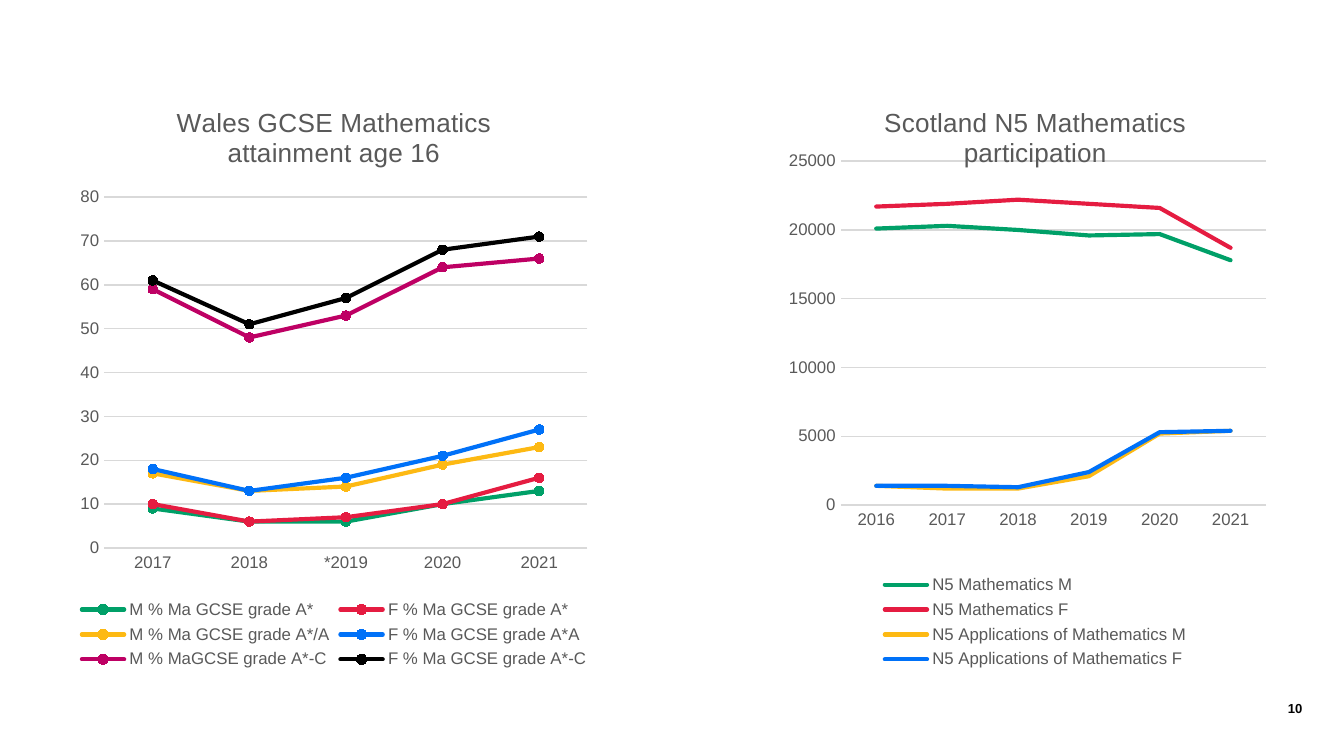
import pptx
import pptx.chart.data
import pptx.dml.color
import pptx.enum.chart
import pptx.enum.text
import pptx.oxml
import pptx.oxml.ns
import pptx.util

Inches, Pt = pptx.util.Inches, pptx.util.Pt
XL = pptx.enum.chart
COLORS = {
    "text": "595959", "grid": "D9D9D9", "black": "000000", "green": "00A068",
    "red": "E51C41", "yellow": "FDB913", "blue": "0071F8", "magenta": "BE0064",
}
SERIES_COLORS = ["green", "red", "yellow", "blue", "magenta", "black"]


def rgb(name):
    return pptx.dml.color.RGBColor.from_string(COLORS[name])


def style_font(font, size, color, bold=False):
    font.name, font.size, font.bold = "Arial", Pt(size), bold
    font.color.rgb = rgb(color)


prs = pptx.Presentation()
prs.slide_width = Inches(10)
prs.slide_height = prs.slide_width * 9 // 16
slide = prs.slides.add_slide(prs.slide_layouts[6])

page_number = slide.shapes.add_textbox(Inches(8.7), Inches(5.21), Inches(0.99), Inches(0.3)).text_frame
page_number.word_wrap = True
page_number.margin_left = page_number.margin_right = 0
page_number.margin_top = page_number.margin_bottom = 0
number_line = page_number.paragraphs[0]
number_line.text = "10"
number_line.alignment = pptx.enum.text.PP_ALIGN.RIGHT
number_line.space_after = Pt(6)
style_font(number_line.runs[0].font, 7, "black", bold=True)

CHART_TOP, CHART_HEIGHT = 0.61, 4.41
wales = {
    "title": "Wales GCSE Mathematics attainment age 16",
    "left": 0.52, "width": 3.93, "markers": True, "plot": None,
    "axis_max": 80, "axis_step": 10,
    "years": ["2017", "2018", "*2019", "2020", "2021"],
    "series": [
        ("M % Ma GCSE grade A*", [9, 6, 6, 10, 13]),
        ("F % Ma GCSE grade A*", [10, 6, 7, 10, 16]),
        ("M % Ma GCSE grade A*/A", [17, 13, 14, 19, 23]),
        ("F % Ma GCSE grade A*A", [18, 13, 16, 21, 27]),
        ("M % MaGCSE grade A*-C", [59, 48, 53, 64, 66]),
        ("F % Ma GCSE grade A*-C", [61, 51, 57, 68, 71]),
    ],
}
# The plot is given in inches inside its chart.
scotland = {
    "title": "Scotland N5 Mathematics participation",
    "left": 5.87, "width": 3.66, "markers": False,
    "plot": {"x": 0.38, "y": 0.59, "w": 3.17, "h": 2.56},
    "axis_max": 25000, "axis_step": 5000,
    "years": ["2016", "2017", "2018", "2019", "2020", "2021"],
    "series": [
        ("N5 Mathematics M", [20100, 20300, 20000, 19600, 19700, 17800]),
        ("N5 Mathematics F", [21700, 21900, 22200, 21900, 21600, 18700]),
        ("N5 Applications of Mathematics M", [1400, 1200, 1200, 2100, 5200, 5400]),
        ("N5 Applications of Mathematics F", [1400, 1400, 1300, 2400, 5300, 5400]),
    ],
}

for nation in (wales, scotland):
    results = pptx.chart.data.CategoryChartData(number_format="General")
    results.categories = nation["years"]
    for name, values in nation["series"]:
        results.add_series(name, values)
    kind = XL.XL_CHART_TYPE.LINE_MARKERS if nation["markers"] else XL.XL_CHART_TYPE.LINE
    chart = slide.shapes.add_chart(
        kind, Inches(nation["left"]), Inches(CHART_TOP),
        Inches(nation["width"]), Inches(CHART_HEIGHT), results
    ).chart
    style_font(chart.font, 10, "black")

    chart.has_title = True
    title = chart.chart_title.text_frame.paragraphs[0]
    title.text = nation["title"]
    style_font(title.runs[0].font, 14, "text")
    chart.chart_title.include_in_layout = False

    chart.has_legend = True
    chart.legend.position = XL.XL_LEGEND_POSITION.BOTTOM
    chart.legend.include_in_layout = False
    style_font(chart.legend.font, 9, "text")

    for axis in (chart.category_axis, chart.value_axis):
        axis.major_tick_mark = axis.minor_tick_mark = XL.XL_TICK_MARK.NONE
        style_font(axis.tick_labels.font, 9, "text")
    chart.value_axis.minimum_scale = 0
    chart.value_axis.maximum_scale = nation["axis_max"]
    chart.value_axis.major_unit = nation["axis_step"]
    chart.value_axis.format.line.fill.background()
    for line in (chart.category_axis.format.line, chart.value_axis.major_gridlines.format.line):
        line.color.rgb = rgb("grid")
        line.width = Pt(0.75)

    plot = chart.plots[0]
    plot.vary_by_categories = False
    for series, color in zip(plot.series, SERIES_COLORS):
        series.smooth = False
        series.format.line.color.rgb = rgb(color)
        series.format.line.width = Pt(2.25)
        if nation["markers"]:
            series.marker.style = XL.XL_MARKER_STYLE.CIRCLE
            series.marker.size = 5
            series.marker.format.fill.solid()
            series.marker.format.fill.fore_color.rgb = rgb(color)
            series.marker.format.line.color.rgb = rgb(color)
    for series_line in chart.element.xpath(".//c:ser/c:spPr/a:ln"):
        series_line.set("cap", "rnd")

    if nation["plot"]:
        plot_area = chart.element.find(".//" + pptx.oxml.ns.qn("c:plotArea"))
        for automatic in plot_area.findall(pptx.oxml.ns.qn("c:layout")):
            plot_area.remove(automatic)
        settings = '<c:layoutTarget val="inner"/><c:xMode val="edge"/><c:yMode val="edge"/>'
        for key, inches in nation["plot"].items():
            whole = nation["width"] if key in "xw" else CHART_HEIGHT
            settings += f'<c:{key} val="{inches / whole}"/>'
        plot_area.insert(0, pptx.oxml.parse_xml(
            f'<c:layout {pptx.oxml.ns.nsdecls("c")}><c:manualLayout>{settings}</c:manualLayout></c:layout>'
        ))

prs.save("out.pptx")
